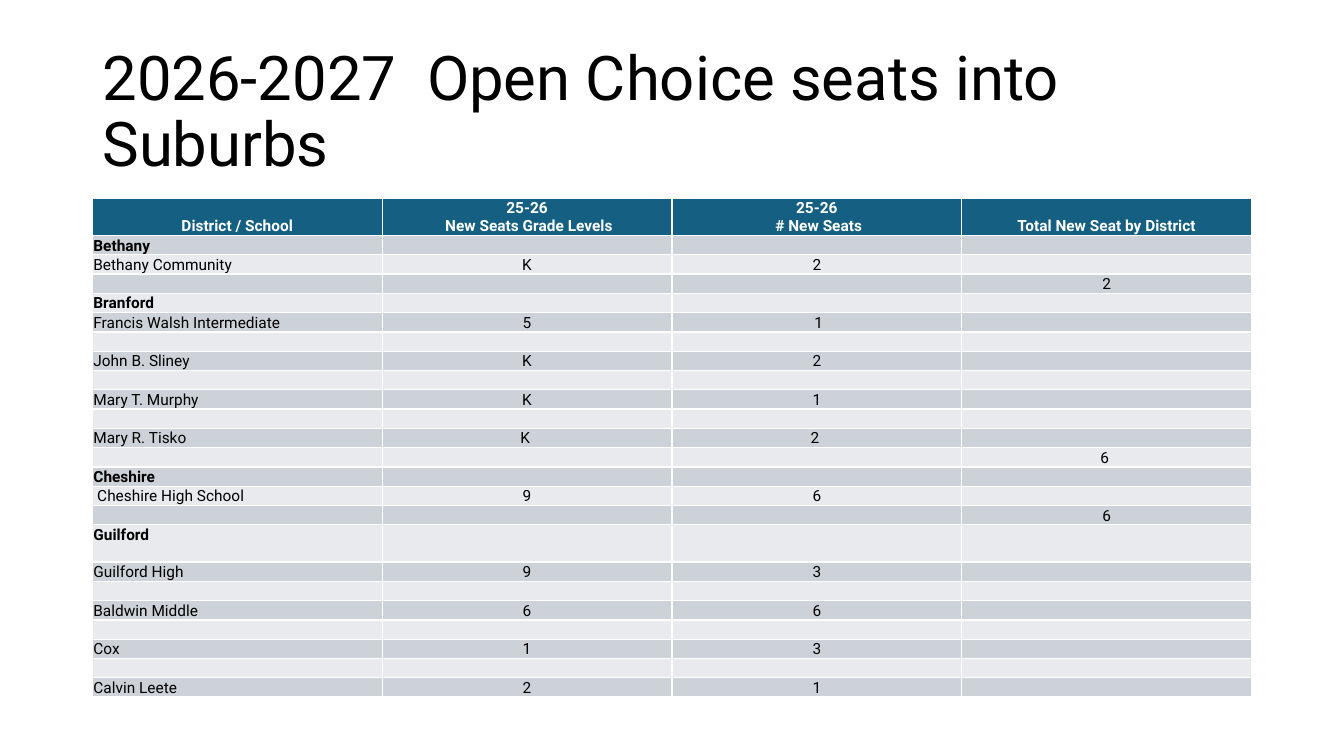
from lxml import etree
from pptx import Presentation
from pptx import util as u
from pptx.dml import color
from pptx.enum import text
from pptx.oxml import ns

COLORS = {"header": "156082", "odd": "CCD2D8", "even": "E8EAED",
          "ink": "000000", "paper": "FFFFFF"}

HEADER = ["District / School", "25-26\n New Seats Grade Levels",
          "25-26\n # New Seats", "Total New Seat by District"]
BLANK = ("", "", "", "")
SEATS = [
    ("Bethany", "", "", ""),
    ("Bethany Community", "K", "2", ""),
    ("", "", "", "2"),
    ("Branford", "", "", ""),
    ("Francis Walsh Intermediate", "5", " 1", ""),
    BLANK,
    ("John B. Sliney", "K", "2", ""),
    BLANK,
    ("Mary T. Murphy", "K", "1", ""),
    BLANK,
    ("Mary R. Tisko ", "K ", "2 ", ""),
    ("", "", "", "6 "),
    ("Cheshire", "", "", ""),
    (" Cheshire High School", "9", "6", ""),
    ("", "", "", "6"),
    ("Guilford", "", "", ""),
    ("Guilford High", "9", "3", ""),
    BLANK,
    ("Baldwin Middle", "6", "6", ""),
    BLANK,
    ("Cox", "1", "3", ""),
    BLANK,
    ("Calvin Leete", "2", "1", ""),
]
DISTRICTS = {"Bethany", "Branford", "Cheshire", "Guilford"}


class Deck:
    font = "Roboto"
    columns, rows = 160, 90
    row_height, tall_row_height = 2.3, 4.44

    def __init__(self):
        self.prs = Presentation()
        self.prs.slide_width = u.Inches(13.33)
        self.prs.slide_height = u.Inches(7.5)
        self.s = self.prs.slides.add_slide(self.prs.slide_layouts[5])

    def x(self, columns):
        return int(self.prs.slide_width * columns / self.columns)

    def y(self, rows):
        return int(self.prs.slide_height * rows / self.rows)

    def style(self, p, size, ink, bold=False, align=text.PP_ALIGN.LEFT):
        p.alignment = align
        p.font.name, p.font.size, p.font.bold = self.font, u.Pt(size), bold
        p.font.color.rgb = color.RGBColor.from_string(COLORS[ink])

    def title(self, words, left, top, width, height):
        sp = self.s.shapes.title
        sp.left, sp.top = self.x(left), self.y(top)
        sp.width, sp.height = self.x(width), self.y(height)
        tf = sp.text_frame
        tf.text = words
        tf.word_wrap = True
        tf.auto_size = text.MSO_AUTO_SIZE.NONE
        tf.vertical_anchor = text.MSO_ANCHOR.MIDDLE
        p = tf.paragraphs[0]
        p.line_spacing = 0.9
        self.style(p, 44, "ink")

    def cell(self, cell, words, fill, ink, bold, align, anchor):
        cell.fill.solid()
        cell.fill.fore_color.rgb = color.RGBColor.from_string(COLORS[fill])
        cell.margin_left = cell.margin_right = cell.margin_top = u.Inches(0.01)
        cell.margin_bottom = 0
        cell.vertical_anchor = anchor
        cell.text = words
        for p in cell.text_frame.paragraphs:
            self.style(p, 11, ink, bold, align)
            if not words:
                etree.SubElement(p._p, ns.qn("a:endParaRPr"), sz="1100")

    def table(self, header, body, left, top, width):
        heights = [self.tall_row_height] + [
            self.tall_row_height if row[0] == "Guilford" else self.row_height
            for row in body]
        table = self.s.shapes.add_table(
            len(heights), len(header), self.x(left), self.y(top),
            self.x(width), self.y(sum(heights))).table
        for row, height in zip(table.rows, heights):
            row.height = self.y(height)
        for i, values in enumerate([header, *body]):
            top_row = i == 0
            fill = "header" if top_row else "odd" if i % 2 else "even"
            ink = "paper" if top_row else "ink"
            bold = top_row or values[0] in DISTRICTS
            anchor = (text.MSO_ANCHOR.TOP if values[0] == "Guilford"
                      else text.MSO_ANCHOR.BOTTOM)
            for j, words in enumerate(values):
                align = (text.PP_ALIGN.CENTER if top_row or j
                         else text.PP_ALIGN.LEFT)
                self.cell(table.cell(i, j), words, fill, ink, bold, align, anchor)


def main():
    deck = Deck()
    deck.title("2026-2027  Open Choice seats into Suburbs", 11, 4.8, 138, 17.4)
    deck.table(HEADER, SEATS, 11, 23.6, 138)
    deck.prs.save("out.pptx")


if __name__ == "__main__":
    main()
